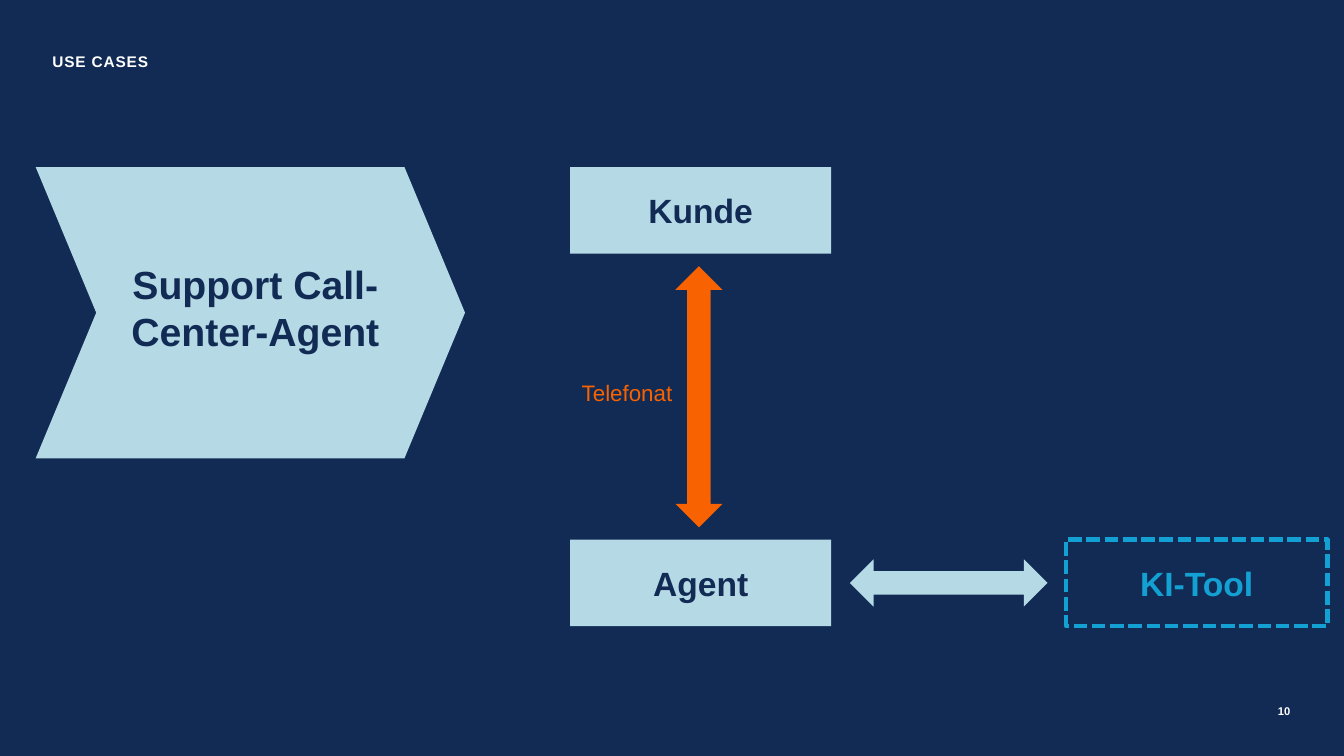
from dataclasses import dataclass
from typing import Optional

from pptx import Presentation
from pptx.dml.color import RGBColor
from pptx.enum.dml import MSO_LINE
from pptx.enum.shapes import MSO_SHAPE
from pptx.enum.text import MSO_ANCHOR, PP_ALIGN
from pptx.util import Cm, Pt

RECT = MSO_SHAPE.RECTANGLE
CHEVRON = MSO_SHAPE.CHEVRON
UP_DOWN = MSO_SHAPE.UP_DOWN_ARROW
LEFT_RIGHT = MSO_SHAPE.LEFT_RIGHT_ARROW
LEFT, MID, RIGHT = PP_ALIGN.LEFT, PP_ALIGN.CENTER, PP_ALIGN.RIGHT
TOP, MIDDLE = MSO_ANCHOR.TOP, MSO_ANCHOR.MIDDLE
DASH = MSO_LINE.SQUARE_DOT


@dataclass(frozen=True)
class Theme:
    font: str = "Arial"
    navy: str = "122B54"
    pale: str = "B5DAE6"
    blue: str = "13A0D3"
    fire: str = "F86200"
    white: str = "FFFFFF"
    topic: int = 28
    node: int = 24
    label: int = 16
    head: int = 11
    page: int = 8


@dataclass(frozen=True)
class Area:
    """Left, top, width and height in centimetres."""
    x: float
    y: float
    w: float
    h: float


@dataclass(frozen=True)
class Form:
    kind: MSO_SHAPE
    area: Area
    fill: Optional[str] = None
    line: Optional[str] = None
    text: str = ""
    ink: str = ""
    size: int = 0


@dataclass(frozen=True)
class Note:
    area: Area
    text: str
    ink: str
    size: int
    bold: bool = True
    align: PP_ALIGN = LEFT
    anchor: MSO_ANCHOR = TOP


THEME = Theme()


def color(code: str) -> RGBColor:
    return RGBColor.from_string(code)


def place(area: Area) -> tuple:
    return Cm(area.x), Cm(area.y), Cm(area.w), Cm(area.h)


def inset(frame, left=0.0, top=0.0, right=0.0, bottom=0.0) -> None:
    frame.margin_left, frame.margin_top = Cm(left), Cm(top)
    frame.margin_right, frame.margin_bottom = Cm(right), Cm(bottom)


def write(frame, text: str, ink: str, size: int, bold: bool,
          align: PP_ALIGN, anchor: MSO_ANCHOR):
    frame.word_wrap = True
    frame.vertical_anchor = anchor
    para = frame.paragraphs[0]
    para.alignment = align
    para.add_run().text = text
    font = para.font
    font.name, font.size, font.bold = THEME.font, Pt(size), bold
    font.color.rgb = color(ink)
    return para


def draw(slide, form: Form):
    shape = slide.shapes.add_shape(form.kind, *place(form.area))
    shape.shadow.inherit = False
    if form.fill:
        shape.fill.solid()
        shape.fill.fore_color.rgb = color(form.fill)
    else:
        shape.fill.background()
    if form.line:
        shape.line.color.rgb = color(form.line)
        shape.line.width = Pt(3.25)
        shape.line.dash_style = DASH
    else:
        shape.line.fill.background()
    if form.text:
        write(shape.text_frame, form.text, form.ink, form.size, True, MID, MIDDLE)
    return shape


def label(slide, note: Note):
    frame = slide.shapes.add_textbox(*place(note.area)).text_frame
    inset(frame)
    return write(frame, note.text, note.ink, note.size, note.bold,
                 note.align, note.anchor)


def main() -> None:
    t = THEME
    deck = Presentation()
    deck.slide_width, deck.slide_height = Cm(33.87), Cm(19.05)
    slide = deck.slides.add_slide(deck.slide_layouts[6])
    slide.background.fill.solid()
    slide.background.fill.fore_color.rgb = color(t.navy)

    head = label(slide, Note(Area(1.32, 1.32, 25.9, 0.71), "USE CASES", t.white, t.head))
    head.runs[0].font._element.set("spc", "60")
    page = label(slide, Note(Area(31.78, 17.7, 0.74, 0.41), "10", t.white, t.page,
                             align=RIGHT, anchor=MIDDLE))
    page.line_spacing = Pt(10)

    topic = draw(slide, Form(CHEVRON, Area(0.9, 4.21, 10.82, 7.34), t.pale,
                             text="Support Call-Center-Agent", ink=t.navy, size=t.topic))
    topic.adjustments[0] = 0.208
    inset(topic.text_frame, left=0.5, right=0.25, bottom=0.25)

    wide, high, thick = 6.58, 2.18, 1.19
    col, side = 14.37, 26.87
    top, low = 4.21, 13.6
    forms = [
        Form(RECT, Area(col, top, wide, high), t.pale,
             text="Kunde", ink=t.navy, size=t.node),
        Form(RECT, Area(col, low, wide, high), t.pale,
             text="Agent", ink=t.navy, size=t.node),
        Form(UP_DOWN, Area(17.02, 6.71, thick, 6.58), t.fire),
        Form(LEFT_RIGHT, Area(21.42, low + (high - thick) / 2, 4.98, thick), t.pale),
        Form(RECT, Area(side, low, wide, high), line=t.blue,
             text="KI-Tool", ink=t.blue, size=t.node),
    ]
    for form in forms:
        draw(slide, form)
    label(slide, Note(Area(14.66, 9.55, 3.56, 1.4), "Telefonat", t.fire, t.label, bold=False))

    deck.save("out.pptx")


if __name__ == "__main__":
    main()
